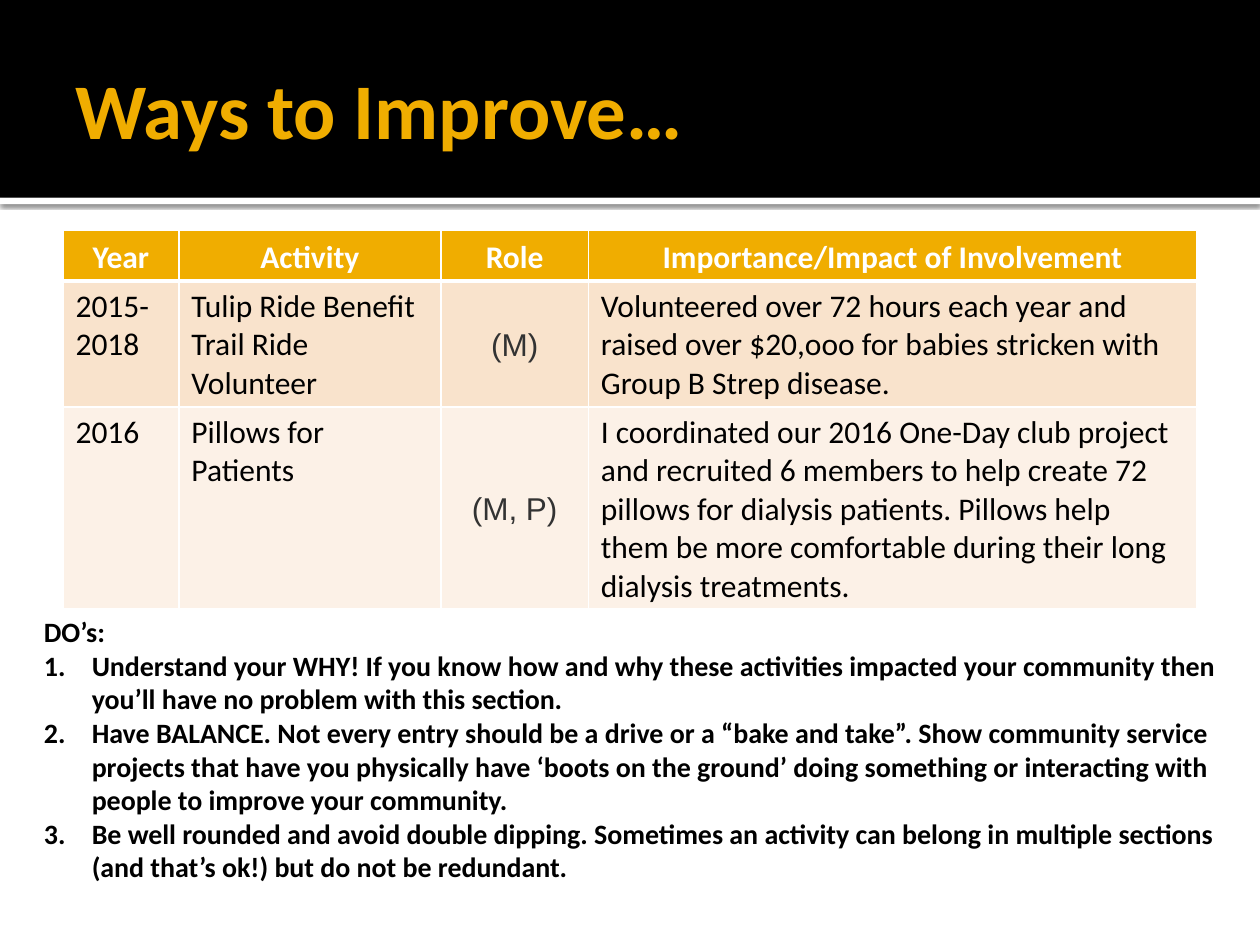
from dataclasses import dataclass

from lxml import etree
from pptx import Presentation
from pptx import util as u
from pptx.dml.color import RGBColor
from pptx.enum import shapes, text
from pptx.oxml import ns


@dataclass(frozen=True)
class Theme:
    """Colours, fonts and type sizes of the slide."""
    black: str = "000000"
    white: str = "FFFFFF"
    gold: str = "F0AD00"
    grey: str = "333333"
    bands: tuple = ("F9E3CC", "FCF1E7")
    font: str = "Calibri"
    role_font: str = "Arial"
    title: int = 45
    table: int = 18
    advice: int = 16


THEME = Theme()
COLUMNS = (0.92, 2.08, 1.17, 4.83)
ROWS = (0.4, 1.0, 1.6)
ROLE = 2
ENTRIES = (
    ("Year", "Activity", "Role", "Importance/Impact of Involvement"),
    ("2015-2018", "Tulip Ride Benefit Trail Ride Volunteer", "(M)",
     "Volunteered over 72 hours each year and raised over $20,ooo for babies "
     "stricken with Group B Strep disease."),
    ("2016", "Pillows for Patients", "(M, P)",
     "I coordinated our 2016 One-Day club project and recruited 6 members to help "
     "create 72 pillows for dialysis patients. Pillows help them be more "
     "comfortable during their long dialysis treatments."),
)
ADVICE = (
    "Understand your WHY! If you know how and why these activities impacted your "
    "community then you’ll have no problem with this section.",
    "Have BALANCE. Not every entry should be a drive or a “bake and take”. Show "
    "community service projects that have you physically have ‘boots on the ground’ "
    "doing something or interacting with people to improve your community.",
    "Be well rounded and avoid double dipping. Sometimes an activity can belong in "
    "multiple sections (and that’s ok!) but do not be redundant.",
)


def add_element(parent, tag, **attributes):
    """Append a DrawingML element and return it."""
    return etree.SubElement(parent, ns.qn(tag), attributes)


def write(para, words, size, color, bold=False, font=THEME.font):
    """Fill a paragraph with words in one style."""
    para.text = words
    for span in para.runs:
        span.font.name = font
        span.font.size = u.Pt(size)
        span.font.bold = bold
        span.font.color.rgb = RGBColor.from_string(color)


def add_bar(page, left, top, width, height, color):
    """Draw a plain rectangle without line or shadow."""
    bar = page.shapes.add_shape(shapes.MSO_SHAPE.RECTANGLE, u.Inches(left),
                                u.Inches(top), u.Inches(width), u.Inches(height))
    bar.shadow.inherit = False
    bar.fill.solid()
    bar.fill.fore_color.rgb = RGBColor.from_string(color)
    bar.line.fill.background()
    return bar


def add_text_box(page, left, top, width, height):
    """Place a wrapping text box and return its text frame."""
    box = page.shapes.add_textbox(u.Inches(left), u.Inches(top),
                                  u.Inches(width), u.Inches(height))
    box.text_frame.word_wrap = True
    return box.text_frame


def add_header(page, left, top, width, height):
    """Draw the black title band with its shadowed white edge."""
    edge = add_bar(page, left, top + height, width, 0.05, THEME.white)
    effects = edge._element.spPr.find(ns.qn("a:effectLst"))
    shadow = add_element(effects, "a:outerShdw", blurRad=str(u.Pt(2.5)),
                         dist=str(u.Pt(0.8)), dir="5400000", rotWithShape="0")
    color = add_element(shadow, "a:srgbClr", val=THEME.black)
    add_element(color, "a:alpha", val="60000")
    add_bar(page, left, top, width, height, THEME.black)
    frame = add_text_box(page, left + 0.5, top + 0.17, width - 1, height - 0.2)
    frame.margin_right = u.Inches(0.05)
    frame.vertical_anchor = text.MSO_ANCHOR.MIDDLE
    write(frame.paragraphs[0], "Ways to Improve…", THEME.title, THEME.gold, True)


def add_borders(cell, top, bottom):
    """Give a cell white borders, placed ahead of its fill."""
    properties = cell._tc.get_or_add_tcPr()
    sides = (("L", 1), ("R", 1), ("T", top), ("B", bottom))
    for position, (side, points) in enumerate(sides):
        line = add_element(properties, f"a:ln{side}", w=str(u.Pt(points)))
        fill = add_element(line, "a:solidFill")
        add_element(fill, "a:srgbClr", val=THEME.white)
        properties.insert(position, line)


def style_cell(cell, words, row, column):
    """Write and format one table cell according to its place."""
    heading = row == 0
    role = column == ROLE and not heading
    cell.margin_top, cell.margin_bottom = u.Inches(0.05), u.Inches(0.02)
    cell.fill.solid()
    cell.fill.fore_color.rgb = RGBColor.from_string(
        THEME.gold if heading else THEME.bands[(row - 1) % 2])
    add_borders(cell, 3 if row == 1 else 1, 3 if heading else 1)
    para = cell.text_frame.paragraphs[0]
    color = THEME.white if heading else THEME.grey if role else THEME.black
    write(para, words, THEME.table, color, heading,
          THEME.role_font if role else THEME.font)
    if heading or role:
        cell.vertical_anchor = text.MSO_ANCHOR.MIDDLE
        para.alignment = text.PP_ALIGN.CENTER


def add_activity_table(page, left, top, width, height):
    """Place the table of activities."""
    table = page.shapes.add_table(len(ROWS), len(COLUMNS), u.Inches(left), u.Inches(top),
                                  u.Inches(width), u.Inches(height)).table
    for column, size in zip(table.columns, COLUMNS):
        column.width = u.Inches(size)
    for row, size in zip(table.rows, ROWS):
        row.height = u.Inches(size)
    for row, entry in enumerate(ENTRIES):
        for column, words in enumerate(entry):
            style_cell(table.cell(row, column), words, row, column)


def add_advice(page, left, top, width, height):
    """Place the heading and numbered list of advice."""
    frame = add_text_box(page, left, top, width, height)
    write(frame.paragraphs[0], "DO’s:", THEME.advice, THEME.black, True)
    for words in ADVICE:
        para = frame.add_paragraph()
        write(para, words, THEME.advice, THEME.black, True)
        properties = para._p.get_or_add_pPr()
        indent = u.Inches(0.38)
        properties.set("marL", str(indent))
        properties.set("indent", str(-indent))
        add_element(properties, "a:buFont", typeface="+mj-lt")
        add_element(properties, "a:buAutoNum", type="arabicPeriod")


def main():
    """Build and save the slide."""
    deck = Presentation()
    deck.slide_width, deck.slide_height = u.Inches(10), u.Inches(7.5)
    page = deck.slides.add_slide(deck.slide_layouts[6])
    add_header(page, 0, 0, 10, 1.57)
    add_advice(page, 0.25, 4.83, 9.58, 2.52)
    add_activity_table(page, 0.5, 1.83, sum(COLUMNS), sum(ROWS))
    deck.save("out.pptx")


if __name__ == "__main__":
    main()
